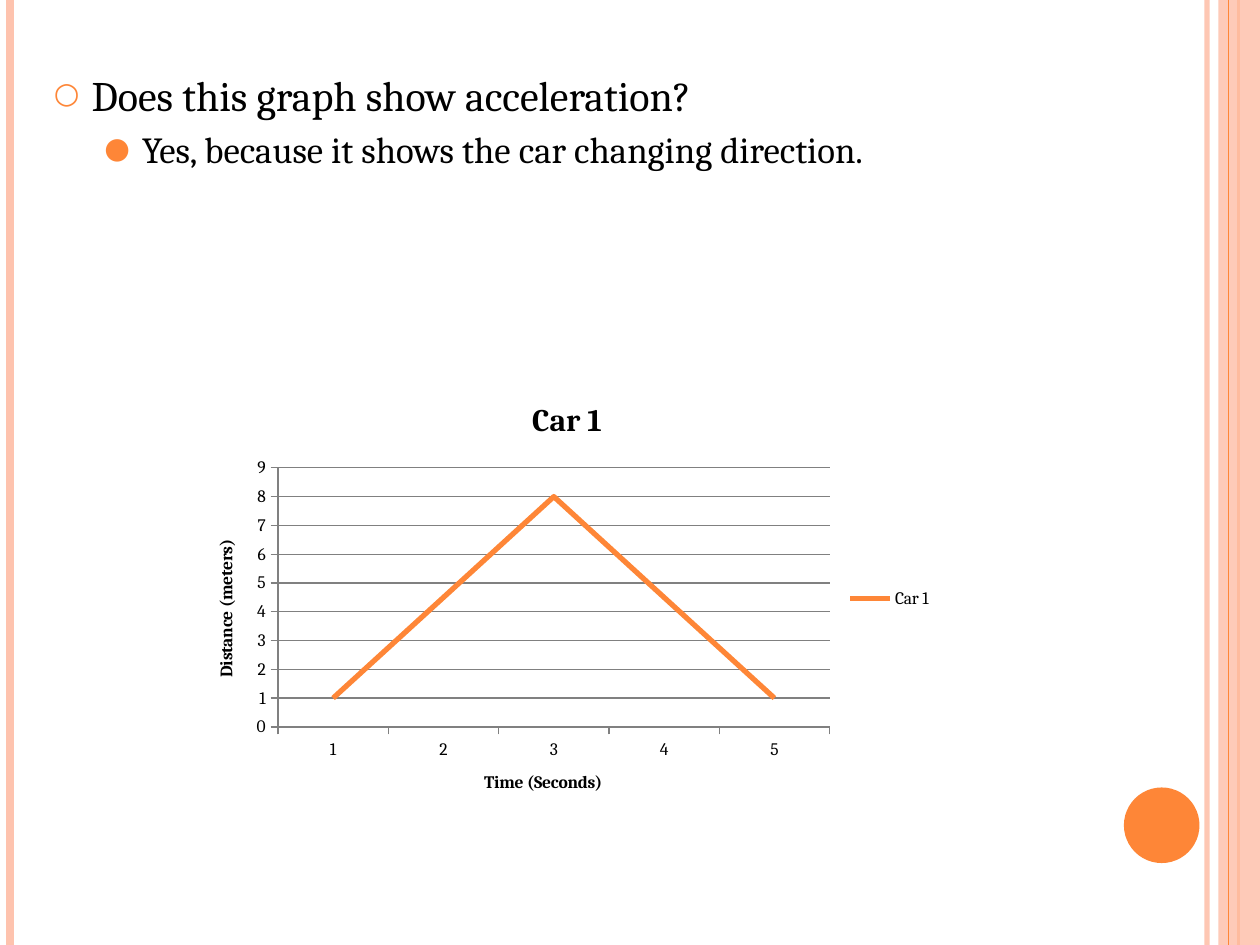
from lxml import etree
from pptx import Presentation
from pptx.chart.data import CategoryChartData
from pptx.dml.color import RGBColor
from pptx.enum import chart as charts, shapes
from pptx.oxml import ns
from pptx.util import Inches, Pt

ORANGE = RGBColor(0xFE, 0x86, 0x37)
PEACH = RGBColor(0xFE, 0xC3, 0xAE)
BLACK = RGBColor(0, 0, 0)
GRAY = RGBColor(0x80, 0x80, 0x80)
FONT = "Cambria"
PAGE_WIDTH, PAGE_HEIGHT = 10, 7.5


def set_font(font, size, bold=False):
    font.name = FONT
    font.size = Pt(size)
    font.bold = bold
    font.color.rgb = BLACK


def set_opacity(element, percent):
    color = element.find(".//" + ns.qn("a:srgbClr"))
    etree.SubElement(color, ns.qn("a:alpha"), val=str(percent * 1000))


def add_stripe(page, x, color, width, opacity=100):
    stripe = page.shapes.add_connector(
        shapes.MSO_CONNECTOR.STRAIGHT, Inches(x), 0, Inches(x), Inches(PAGE_HEIGHT))
    stripe.line.color.rgb = color
    stripe.line.width = Pt(width)
    properties = stripe._element.spPr
    if opacity < 100:
        set_opacity(properties, opacity)
    etree.SubElement(properties, ns.qn("a:effectLst"))


def add_plain_shape(page, kind, left, top, width, height, color):
    shape = page.shapes.add_shape(
        kind, Inches(left), Inches(top), Inches(width), Inches(height))
    shape.shadow.inherit = False
    shape.fill.solid()
    shape.fill.fore_color.rgb = color
    shape.line.fill.background()
    return shape


def add_bullet(para, mark, percent, indent):
    properties = para._p.get_or_add_pPr()
    properties.set("marL", str(Inches(indent)))
    properties.set("indent", str(Inches(-0.3)))
    color = etree.SubElement(properties, ns.qn("a:buClr"))
    etree.SubElement(color, ns.qn("a:srgbClr"), val=str(ORANGE))
    etree.SubElement(properties, ns.qn("a:buSzPct"), val=str(percent * 1000))
    etree.SubElement(properties, ns.qn("a:buFont"), typeface=FONT)
    etree.SubElement(properties, ns.qn("a:buChar"), char=mark)


def add_question(page):
    box = page.shapes.add_textbox(Inches(0.33), Inches(0.5), Inches(8.67), Inches(1.67))
    frame = box.text_frame
    frame.word_wrap = True
    rows = [
        ("Does this graph show acceleration?", 24, 6, "○", 70, 0.3),
        ("Yes, because it shows the car changing direction.", 21, 4.2, "●", 80, 0.7),
    ]
    for level, (words, size, space, mark, percent, indent) in enumerate(rows):
        para = frame.add_paragraph() if level else frame.paragraphs[0]
        para.text = words
        para.level = level
        para.space_before = Pt(space)
        set_font(para.font, size)
        add_bullet(para, mark, percent, indent)


def set_title(owner, words, size):
    frame = owner.text_frame
    frame.text = words
    set_font(frame.paragraphs[0].font, size, bold=True)


def style_axis(axis, title):
    set_title(axis.axis_title, title, 10)
    axis.major_tick_mark = charts.XL_TICK_MARK.OUTSIDE
    axis.minor_tick_mark = charts.XL_TICK_MARK.NONE
    axis.format.line.color.rgb = GRAY


def add_distance_chart(page):
    data = CategoryChartData()
    data.categories = [1, 2, 3, 4, 5]
    data.add_series("Car 1", [1, 4.5, 8, 4.5, 1])
    chart = page.shapes.add_chart(
        charts.XL_CHART_TYPE.LINE, Inches(1.5), Inches(3), Inches(6), Inches(3.5), data).chart
    set_font(chart.font, 10)
    set_title(chart.chart_title, "Car 1", 18)
    chart.has_legend = True
    chart.legend.position = charts.XL_LEGEND_POSITION.RIGHT
    chart.legend.include_in_layout = False

    # Axes
    style_axis(chart.category_axis, "Time (Seconds)")
    style_axis(chart.value_axis, "Distance (meters)")
    chart.value_axis.has_major_gridlines = True
    chart.value_axis.major_gridlines.format.line.color.rgb = GRAY

    # Line
    plot = chart.plots[0]
    plot.vary_by_categories = False
    series = plot.series[0]
    series.smooth = False
    series.marker.style = charts.XL_MARKER_STYLE.NONE
    series.format.line.color.rgb = ORANGE
    series.format.line.width = Pt(3)


def main():
    deck = Presentation()
    deck.slide_width, deck.slide_height = Inches(PAGE_WIDTH), Inches(PAGE_HEIGHT)
    page = deck.slides.add_slide(deck.slide_layouts[6])

    # Edge stripes, side band and corner disc
    add_stripe(page, 9.58, PEACH, 3, 93)
    add_stripe(page, 0.08, PEACH, 4.5)
    add_stripe(page, 9.83, ORANGE, 1.5)
    band = add_plain_shape(
        page, shapes.MSO_SHAPE.RECTANGLE, 9.67, 0, 0.33, PAGE_HEIGHT, PEACH)
    set_opacity(band._element.spPr, 87)
    add_stripe(page, 9.75, ORANGE, 0.75)
    add_plain_shape(page, shapes.MSO_SHAPE.OVAL, 8.92, 6.25, 0.6, 0.6, ORANGE)

    # Content
    add_question(page)
    add_distance_chart(page)
    deck.save("out.pptx")


if __name__ == "__main__":
    main()
